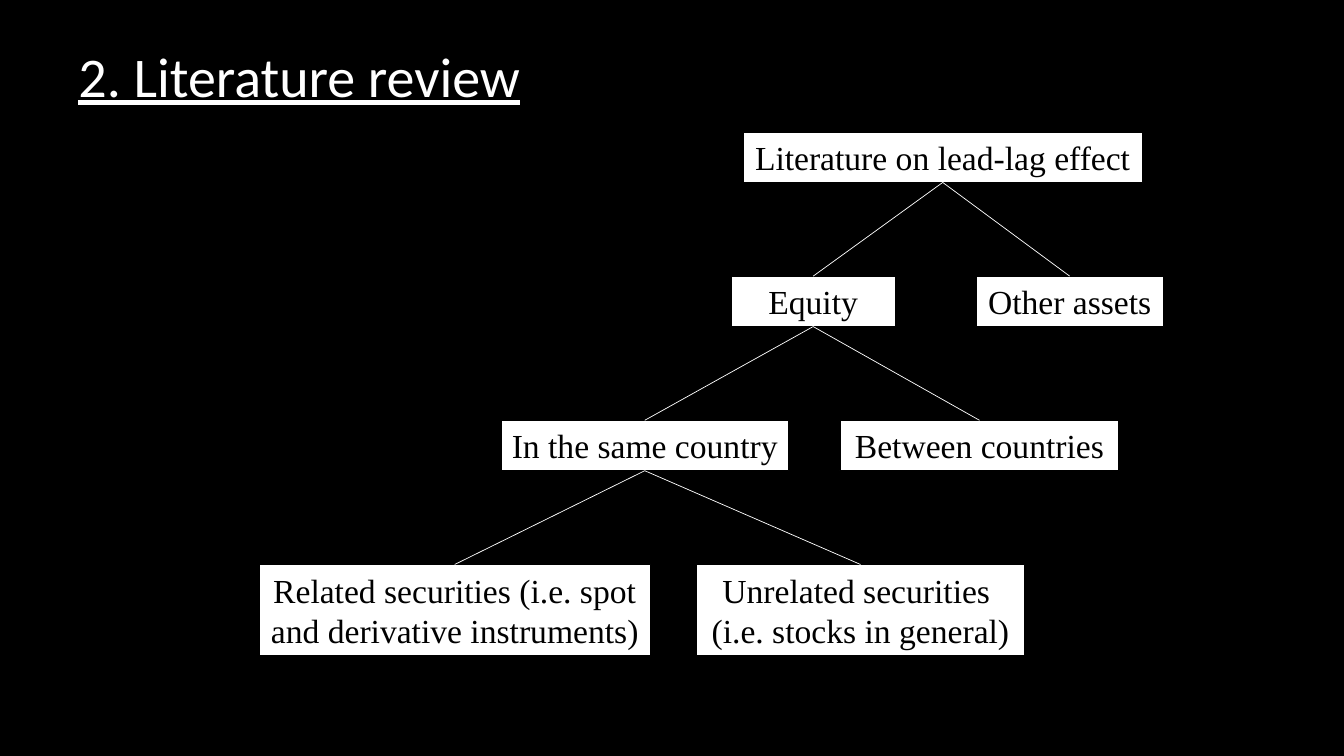
import pptx
import pptx.dml.color
import pptx.enum.shapes
import pptx.enum.text
import pptx.oxml
import pptx.oxml.ns
import pptx.util

Inches = pptx.util.Inches
Pt = pptx.util.Pt


def color(hex_string):
    return pptx.dml.color.RGBColor.from_string(hex_string)


def add_text(paragraph, text, font_name, size, hex_string):
    run = paragraph.add_run()
    run.text = text
    run.font.name = font_name
    run.font.size = Pt(size)
    run.font.color.rgb = color(hex_string)
    return run


BLACK = "000000"
WHITE = "FFFFFF"
FIRST_ROW = 1.31
ROW_PITCH = 1.43
LINE_HEIGHT = 0.41
BOX_PADDING = 0.09
TOP_SITE = 0
BOTTOM_SITE = 2

presentation = pptx.Presentation()
presentation.slide_width = Inches(13.33)
presentation.slide_height = Inches(7.5)
slide = presentation.slides.add_slide(presentation.slide_layouts[6])
slide.background.fill.solid()
slide.background.fill.fore_color.rgb = color(BLACK)

title = slide.shapes.add_textbox(Inches(0.68), Inches(0.36), Inches(4.72), Inches(0.77))
title.text_frame.word_wrap = True
title_run = add_text(title.text_frame.paragraphs[0], "2. Literature review", "Calibri", 40, WHITE)
title_run.font.underline = True

tree = [
    ("literature", None, 0, 7.37, 3.96, 1, ["Literature on lead-lag effect"]),
    ("equity", "literature", 1, 7.25, 1.63, 1, ["Equity"]),
    ("other", "literature", 1, 9.68, 1.86, 1, ["Other assets"]),
    ("same", "equity", 2, 4.97, 2.85, 1, ["In the same country"]),
    ("between", "equity", 2, 8.33, 2.77, 1, ["Between countries"]),
    ("related", "same", 3, 2.57, 3.88, 2,
     ["Related securities (i.e. spot and derivative instruments)"]),
    ("unrelated", "same", 3, 6.91, 3.25, 2,
     ["Unrelated securities ", "(i.e. stocks in general)"]),
]

boxes = {}
for name, parent, row, left, width, line_count, texts in tree:
    box = slide.shapes.add_shape(
        pptx.enum.shapes.MSO_SHAPE.RECTANGLE,
        Inches(left), Inches(FIRST_ROW + row * ROW_PITCH),
        Inches(width), Inches(line_count * LINE_HEIGHT + BOX_PADDING),
    )
    box.shadow.inherit = False
    box.fill.solid()
    box.fill.fore_color.rgb = color(WHITE)
    box.line.color.rgb = color(BLACK)
    box.line.width = Pt(1)
    frame = box.text_frame
    frame.word_wrap = line_count > 1
    frame.vertical_anchor = pptx.enum.text.MSO_ANCHOR.MIDDLE
    for index, text in enumerate(texts):
        paragraph = frame.add_paragraph() if index else frame.paragraphs[0]
        paragraph.alignment = pptx.enum.text.PP_ALIGN.CENTER
        add_text(paragraph, text, "Times New Roman", 24, BLACK)
    boxes[name] = box

for name, parent, *placement in tree:
    if parent is None:
        continue
    branch = slide.shapes.add_connector(
        pptx.enum.shapes.MSO_CONNECTOR.STRAIGHT, 0, 0, 0, 0)
    branch.begin_connect(boxes[parent], BOTTOM_SITE)
    branch.end_connect(boxes[name], TOP_SITE)
    branch.line.color.rgb = color(WHITE)
    branch.line.width = Pt(0.5)
    properties = branch._element.spPr
    properties.append(pptx.oxml.parse_xml(
        "<a:effectLst %s/>" % pptx.oxml.ns.nsdecls("a")))

presentation.save("out.pptx")
